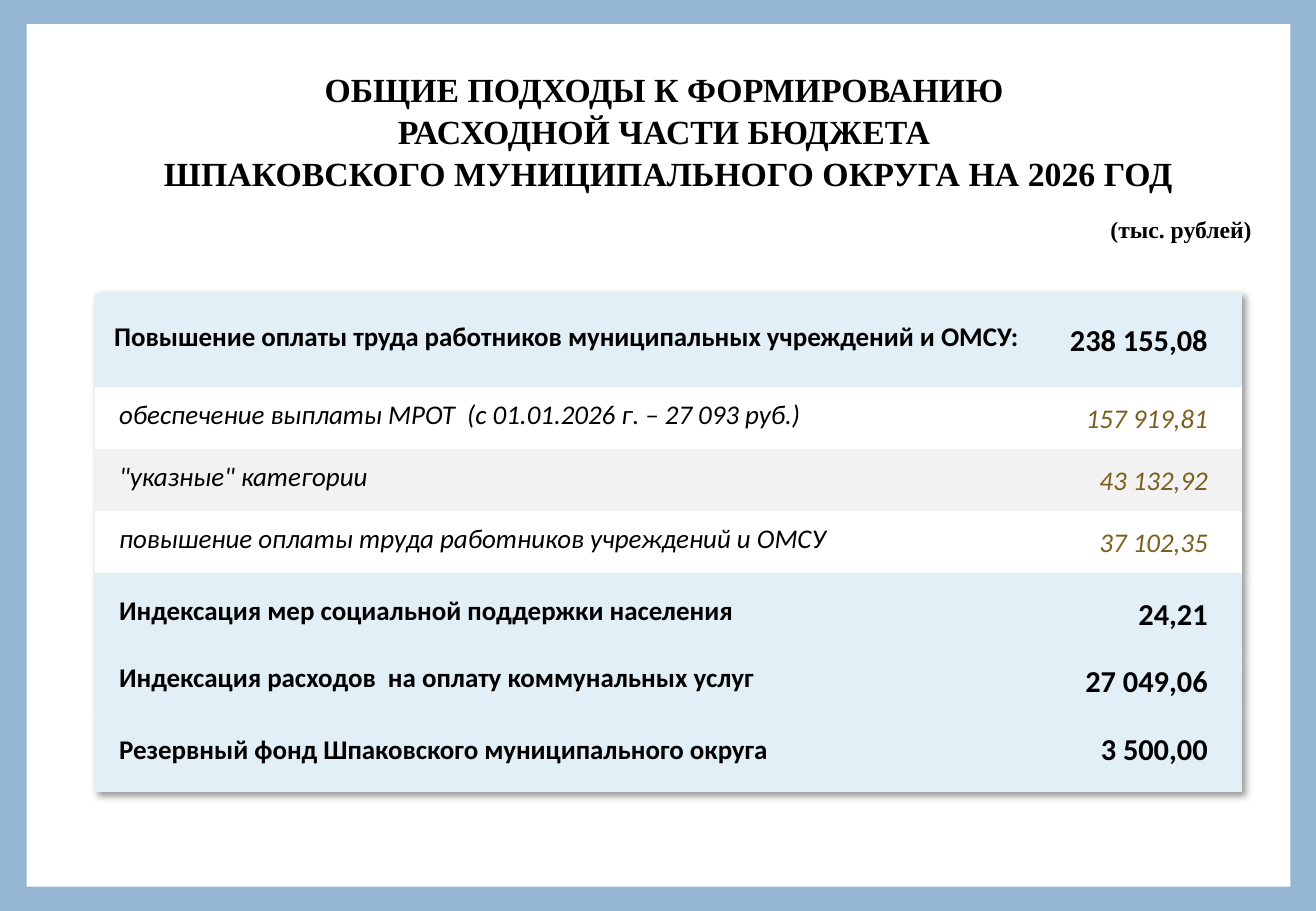
from lxml.etree import SubElement
from pptx import Presentation
from pptx.dml.color import RGBColor
from pptx.enum.shapes import MSO_SHAPE
from pptx.enum.text import MSO_ANCHOR, PP_ALIGN
from pptx.oxml.ns import qn
from pptx.util import Inches, Pt

BLACK = RGBColor(0, 0, 0)
WHITE = RGBColor(255, 255, 255)
FRAME = RGBColor(0x94, 0xB6, 0xD2)
PALE = RGBColor(0xE2, 0xEF, 0xF6)
GREY = RGBColor(0xF2, 0xF2, 0xF2)
GOLD = RGBColor(0x7C, 0x5F, 0x1E)
NO_GRID = "{2D5ABB26-0587-4C30-8999-92F81FD0307C}"

TITLE = [
    "ОБЩИЕ ПОДХОДЫ К ФОРМИРОВАНИЮ ",
    "РАСХОДНОЙ ЧАСТИ БЮДЖЕТА ",
    "ШПАКОВСКОГО МУНИЦИПАЛЬНОГО ОКРУГА НА 2026 ГОД",
]
# label, sum, row height, fill, is a detail row
ROWS = [
    ("Повышение оплаты труда работников муниципальных учреждений и ОМСУ:",
     "238 155,08", 0.78, PALE, False),
    ("обеспечение выплаты МРОТ  (с 01.01.2026 г. – 27 093 руб.)",
     "157 919,81", 0.51, WHITE, True),
    ('"указные" категории', "43 132,92", 0.51, GREY, True),
    ("повышение оплаты труда работников учреждений и ОМСУ",
     "37 102,35", 0.51, WHITE, True),
    ("Индексация мер социальной поддержки населения",
     "24,21", 0.68, PALE, False),
    ("Индексация расходов  на оплату коммунальных услуг",
     "27 049,06", 0.43, PALE, False),
    ("Резервный фонд Шпаковского муниципального округа",
     "3 500,00", 0.69, PALE, False),
]


def add_run(para, text, size, face, color=BLACK, bold=True):
    run = para.add_run()
    run.text = text
    font = run.font
    font.size, font.name = Pt(size), face
    font.bold, font.italic = bold, not bold
    font.color.rgb = color


def set_cell(cell, fill, left, right):
    """Fill the cell, set its side margins and return its paragraph."""
    cell.fill.solid()
    cell.fill.fore_color.rgb = fill
    cell.vertical_anchor = MSO_ANCHOR.MIDDLE
    cell.margin_left, cell.margin_right = Inches(left), Inches(right)
    cell.margin_top, cell.margin_bottom = Inches(0.01), 0
    return cell.text_frame.paragraphs[0]


deck = Presentation()
deck.slide_width, deck.slide_height = Inches(10.83), Inches(7.5)
slide = deck.slides.add_slide(deck.slide_layouts[6])
back = slide.background.fill
back.solid()
back.fore_color.rgb = FRAME

sheet = slide.shapes.add_shape(
    MSO_SHAPE.RECTANGLE, Inches(0.22), Inches(0.2), Inches(10.4), Inches(7.1))
sheet.shadow.inherit = False
sheet.fill.solid()
sheet.fill.fore_color.rgb = WHITE
sheet.line.fill.background()

# Title
title = slide.shapes.add_textbox(
    Inches(0.5), Inches(0.5), Inches(10), Inches(1.15)).text_frame
title.word_wrap = True
for i, line in enumerate(TITLE):
    para = title.add_paragraph() if i else title.paragraphs[0]
    para.alignment = PP_ALIGN.CENTER
    para.line_spacing = Pt(25)
    add_run(para, line, 20, "Times New Roman")

# Budget table
height = sum(row[2] for row in ROWS)
frame = slide.shapes.add_table(
    len(ROWS), 2, Inches(0.78), Inches(2.41), Inches(9.44), Inches(height))
table = frame.table
table.first_row = table.horz_banding = False
table.columns[0].width, table.columns[1].width = Inches(7.87), Inches(1.57)

props = table._tbl.tblPr
style = props.find(qn("a:tableStyleId"))
style.text = NO_GRID
effects = SubElement(props, qn("a:effectLst"))
shade = SubElement(effects, qn("a:outerShdw"), blurRad="50800", dist="38100",
                   dir="2700000", algn="tl", rotWithShape="0")
tint = SubElement(shade, qn("a:srgbClr"), val="000000")
SubElement(tint, qn("a:alpha"), val="40000")
props.append(style)

for i, (label, total, tall, fill, detail) in enumerate(ROWS):
    table.rows[i].height = Inches(tall)
    para = set_cell(table.cell(i, 0), fill, 0.2 if i else 0.16, 0.01)
    if i < len(ROWS) - 1:
        para.line_spacing = Pt(15)
    add_run(para, label, 16, "Calibri", bold=not detail)
    para = set_cell(table.cell(i, 1), fill, 0.01, 0.28)
    para.alignment = PP_ALIGN.RIGHT
    add_run(para, total, 16 if detail else 18, "Calibri",
            GOLD if detail else BLACK, not detail)

# Unit of the sums
unit = slide.shapes.add_textbox(
    Inches(9.04), Inches(1.72), Inches(1.46), Inches(0.34)).text_frame
add_run(unit.paragraphs[0], "(тыс. рублей)", 14, "Times New Roman")

deck.save("out.pptx")
